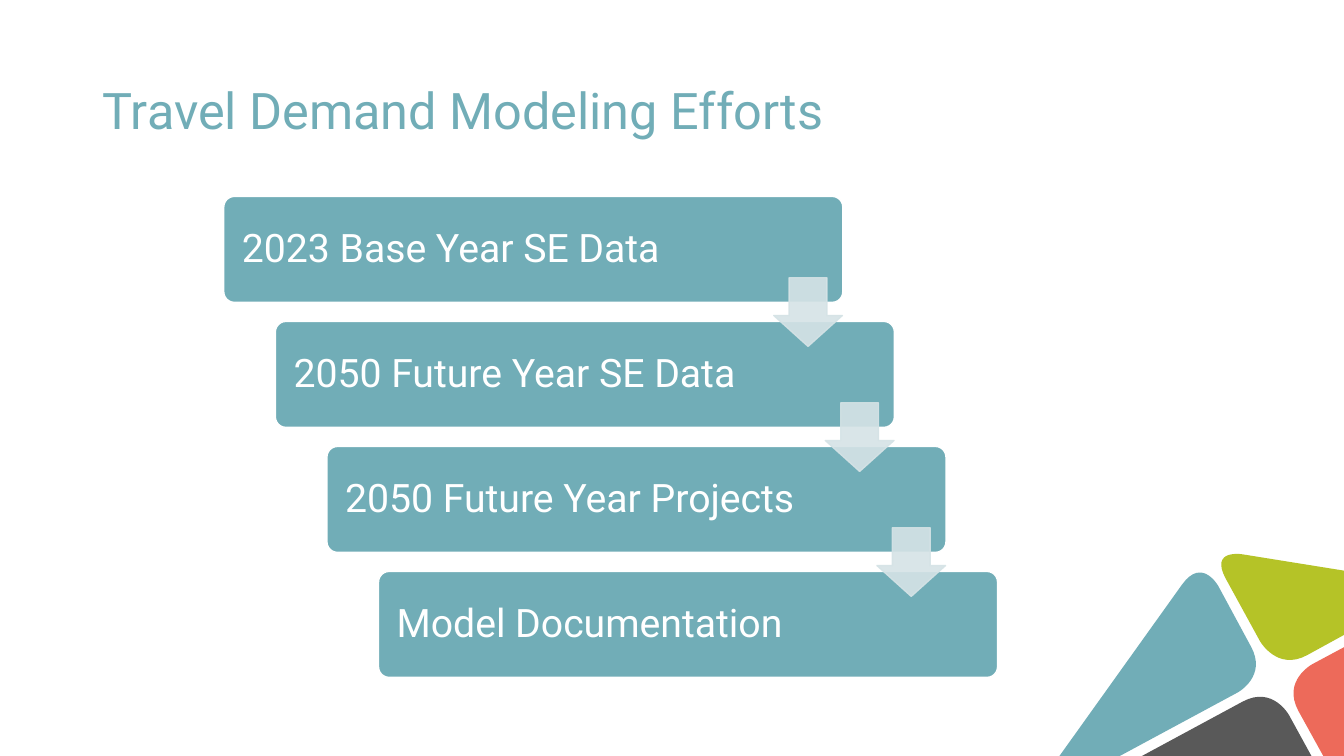
from dataclasses import dataclass

from lxml.etree import SubElement
from pptx import Presentation
from pptx.dml.color import RGBColor
from pptx.enum.shapes import MSO_SHAPE as Preset
from pptx.enum.text import MSO_ANCHOR as Anchor, PP_ALIGN as Align
from pptx.oxml.ns import qn
from pptx.util import Cm, Pt


@dataclass(frozen=True)
class Theme:
    font: str = "Roboto"
    title_size: Pt = Pt(36)
    step_size: Pt = Pt(28)
    teal: RGBColor = RGBColor(0x71, 0xAD, 0xB7)
    lime: RGBColor = RGBColor(0xB5, 0xC3, 0x27)
    coral: RGBColor = RGBColor(0xED, 0x6A, 0x5A)
    gray: RGBColor = RGBColor(0x59, 0x59, 0x59)
    arrow: RGBColor = RGBColor(0xD5, 0xE3, 0xE6)
    white: RGBColor = RGBColor(0xFF, 0xFF, 0xFF)


theme = Theme()


def petal_points(outline, samples=16):
    """Return outline points in EMU; a four-number entry is a rounded corner (apex, end)."""
    points = []
    for entry in outline:
        if len(entry) == 2:
            points.append(entry)
            continue
        start, apex, end = points[-1], entry[:2], entry[2:]
        for sample in range(1, samples + 1):
            t = sample / samples
            u = 1 - t
            points.append(tuple(
                (u**3 + 3 * u * u * t) * s + 3 * u * t * t * a + t**3 * e
                for s, a, e in zip(start, apex, end)
            ))
    return [(Cm(x), Cm(y)) for x, y in points]


def write_text(shape, text, size, color):
    frame = shape.text_frame
    frame.word_wrap = True
    frame.vertical_anchor = Anchor.MIDDLE
    paragraph = frame.paragraphs[0]
    paragraph.text = text
    paragraph.alignment = Align.LEFT
    paragraph.line_spacing = 0.9
    paragraph.font.name = theme.font
    paragraph.font.size = size
    paragraph.font.color.rgb = color


presentation = Presentation()
presentation.slide_width, presentation.slide_height = Cm(33.87), Cm(19.05)
slide = presentation.slides.add_slide(presentation.slide_layouts[6])
shapes = slide.shapes

# Corner petals, in centimetres
petals = [
    (theme.coral, [(33.87, 16.31), (33.07, 16.74), (32.31, 17.15, 32.72, 17.91),
                   (33.35, 19.05), (33.87, 19.05)]),
    (theme.lime, [(30.89, 14.58), (31.75, 16.15), (32.18, 16.92, 32.94, 16.51),
                  (33.87, 16), (33.87, 14.38), (31.32, 13.97),
                  (30.48, 13.82, 30.89, 14.58)]),
    (theme.gray, [(31.32, 17.68), (28.78, 19.05), (33.05, 19.05), (32.49, 18.03),
                  (32.08, 17.27, 31.32, 17.68)]),
    (theme.teal, [(31.52, 16.28), (30.71, 14.78), (30.3, 14.02, 29.79, 14.73),
                  (26.7, 19.05), (28.22, 19.05), (31.19, 17.45),
                  (31.95, 17.04, 31.52, 16.28)]),
]
for color, outline in petals:
    points = petal_points(outline)
    builder = shapes.build_freeform(*points[0])
    builder.add_line_segments(points[1:], close=True)
    petal = builder.convert_to_shape()
    petal.shadow.inherit = False
    petal.fill.solid()
    petal.fill.fore_color.rgb = color
    petal.line.fill.background()

title = shapes.add_textbox(Cm(2.34), Cm(1.02), Cm(29.21), Cm(3.68))
write_text(title, "Travel Demand Modeling Efforts", theme.title_size, theme.teal)

# Staircase of steps, then the arrows that join them
step_x, step_y = 1.3, 3.15
steps = [
    "2023 Base Year SE Data",
    "2050 Future Year SE Data",
    "2050 Future Year Projects",
    "Model Documentation",
]
for index, text in enumerate(steps):
    box = shapes.add_shape(
        Preset.ROUNDED_RECTANGLE,
        Cm(5.64 + index * step_x), Cm(4.95 + index * step_y), Cm(15.6), Cm(2.67),
    )
    box.adjustments[0] = 0.1
    box.shadow.inherit = False
    box.fill.solid()
    box.fill.fore_color.rgb = theme.teal
    box.line.color.rgb = theme.white
    box.line.width = Pt(1)
    box.text_frame.margin_left = Cm(0.38)
    write_text(box, text, theme.step_size, theme.white)

for index in range(len(steps) - 1):
    arrow = shapes.add_shape(
        Preset.DOWN_ARROW,
        Cm(19.5 + index * step_x), Cm(7 + index * step_y), Cm(1.73), Cm(1.73),
    )
    arrow.adjustments[0] = 0.55
    arrow.adjustments[1] = 0.45
    arrow.shadow.inherit = False
    arrow.fill.solid()
    arrow.fill.fore_color.rgb = theme.arrow
    arrow.line.color.rgb = theme.arrow
    arrow.line.width = Pt(1)
    for color in arrow.element.spPr.iter(qn("a:srgbClr")):
        SubElement(color, qn("a:alpha"), val="90000")

presentation.save("out.pptx")
